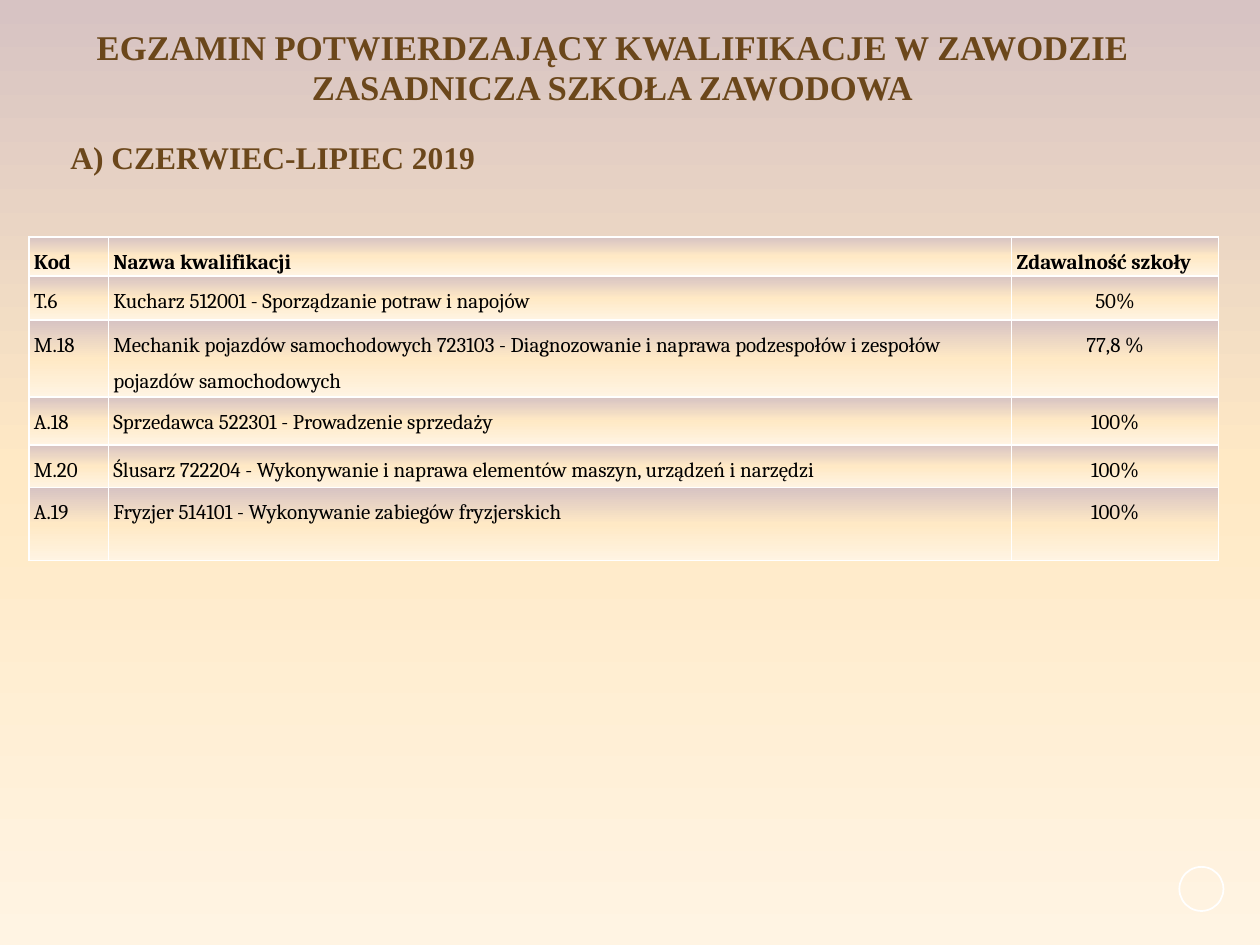
"""Build the slide with vocational exam pass rates by qualification."""
from lxml.etree import SubElement
from pptx import Presentation
from pptx.dml.color import RGBColor
from pptx.enum.shapes import MSO_SHAPE
from pptx.enum.text import MSO_ANCHOR, PP_ALIGN
from pptx.oxml import parse_xml
from pptx.oxml.ns import nsdecls, qn
from pptx.util import Inches, Pt

HEADINGS = [
    {
        "text": "EGZAMIN POTWIERDZAJĄCY KWALIFIKACJE W ZAWODZIE ZASADNICZA SZKOŁA ZAWODOWA",
        "box": (0.36, 0.42, 9, 0.55), "bottom": 0.35, "size": "title", "spacing": 0.95,
    },
    {
        "text": "A) CZERWIEC-LIPIEC 2019",
        "box": (0.2, 1.15, 3.93, 0.55), "bottom": 0.34, "size": "subtitle", "spacing": 0.7,
    },
]
ROWS = [
    ("Kod", "Nazwa kwalifikacji", "Zdawalność szkoły"),
    ("T.6", "Kucharz 512001 - Sporządzanie potraw i napojów", "50%"),
    ("M.18", "Mechanik pojazdów samochodowych 723103 - Diagnozowanie i naprawa "
             "podzespołów i zespołów pojazdów samochodowych", "77,8 %"),
    ("A.18", "Sprzedawca 522301 - Prowadzenie sprzedaży", "100%"),
    ("M.20", "Ślusarz 722204 - Wykonywanie i naprawa elementów maszyn, urządzeń i narzędzi", "100%"),
    ("A.19", "Fryzjer 514101 - Wykonywanie zabiegów fryzjerskich", "100%"),
]
COLUMN_WIDTHS = (0.63, 7.17, 1.64)
ROW_HEIGHTS = (0.29, 0.35, 0.58, 0.38, 0.34, 0.58)
TABLE_ORIGIN = (0.23, 1.88)
BADGE_BOX = (9.36, 6.88, 0.35, 0.35)

THEME = {
    "heading": RGBColor.from_string("6B471B"),
    "body": RGBColor.from_string("000000"),
    "line": "FFFFFF",
    "gradient": ((0, "D7C3C3"), (50, "FFE9C5"), (100, "FFF4E3")),
    "heading_font": "Times New Roman",
    "body_font": "Cambria",
    "title": Pt(19.8),
    "subtitle": Pt(18),
    "cell": Pt(12),
}


def apply_format(target, values):
    """Set each named value on the target."""
    for name, value in values.items():
        setattr(target, name, value)


def apply_gradient(fill, element):
    """Give the fill the vertical theme gradient held in the element."""
    fill.gradient()
    fill.gradient_angle = 270
    stops = element.find(".//" + qn("a:gsLst"))
    for stop in list(stops):
        stops.remove(stop)
    for position, color in THEME["gradient"]:
        stop = SubElement(stops, qn("a:gs"), pos=str(position * 1000))
        SubElement(stop, qn("a:srgbClr"), val=color)


def format_paragraph(paragraph, text, alignment, spacing, font):
    """Write a paragraph with its alignment, spacing and font."""
    paragraph.text = text
    apply_format(paragraph, {"alignment": alignment, "line_spacing": spacing})
    color = font.pop("color")
    apply_format(paragraph.font, font)
    paragraph.font.color.rgb = color


def add_heading(slide, heading):
    """Add one centred heading."""
    shape = slide.shapes.add_textbox(*map(Inches, heading["box"]))
    apply_format(shape.text_frame, {
        "word_wrap": True,
        "vertical_anchor": MSO_ANCHOR.MIDDLE,
        "margin_bottom": Inches(heading["bottom"]),
    })
    format_paragraph(
        shape.text_frame.paragraphs[0], heading["text"], PP_ALIGN.CENTER, heading["spacing"],
        {"name": THEME["heading_font"], "size": THEME[heading["size"]],
         "bold": True, "color": THEME["heading"]},
    )


def add_borders(cell):
    """Draw the four cell borders."""
    properties = cell._tc.get_or_add_tcPr()
    for index, side in enumerate(("lnL", "lnR", "lnT", "lnB")):
        properties.insert(index, parse_xml(
            f'<a:{side} {nsdecls("a")} w="{Pt(1)}"><a:solidFill>'
            f'<a:srgbClr val="{THEME["line"]}"/></a:solidFill></a:{side}>'
        ))


def add_results(slide):
    """Add the table of qualifications."""
    size = (sum(COLUMN_WIDTHS), sum(ROW_HEIGHTS))
    table = slide.shapes.add_table(
        len(ROWS), len(COLUMN_WIDTHS), *map(Inches, TABLE_ORIGIN + size)
    ).table
    for column, width in zip(table.columns, COLUMN_WIDTHS):
        column.width = Inches(width)
    for row, height in zip(table.rows, ROW_HEIGHTS):
        row.height = Inches(height)
    for row_index, texts in enumerate(ROWS):
        for column_index, text in enumerate(texts):
            cell = table.cell(row_index, column_index)
            is_header = row_index == 0
            is_rate = column_index == 2 and not is_header
            apply_format(cell, {
                "margin_left": Inches(0.04), "margin_right": Inches(0.04),
                "margin_top": Inches(0.01), "margin_bottom": 0,
            })
            format_paragraph(
                cell.text_frame.paragraphs[0], text,
                PP_ALIGN.CENTER if is_rate else PP_ALIGN.LEFT, 1.5,
                {"name": THEME["body_font"], "size": THEME["cell"],
                 "bold": is_header, "color": THEME["body"]},
            )
            apply_gradient(cell.fill, cell._tc)
            add_borders(cell)


def add_badge(slide):
    """Add the outlined circle in the corner."""
    shape = slide.shapes.add_shape(MSO_SHAPE.OVAL, *map(Inches, BADGE_BOX))
    shape.shadow.inherit = False
    shape.fill.background()
    shape.line.color.rgb = RGBColor.from_string(THEME["line"])
    shape.line.width = Pt(1)


def main():
    """Create and save the presentation."""
    presentation = Presentation()
    apply_format(presentation, {"slide_width": Inches(10), "slide_height": Inches(7.5)})
    slide = presentation.slides.add_slide(presentation.slide_layouts[6])
    apply_gradient(slide.background.fill, slide._element)
    add_badge(slide)
    for heading in HEADINGS:
        add_heading(slide, heading)
    add_results(slide)
    presentation.save("out.pptx")


if __name__ == "__main__":
    main()
